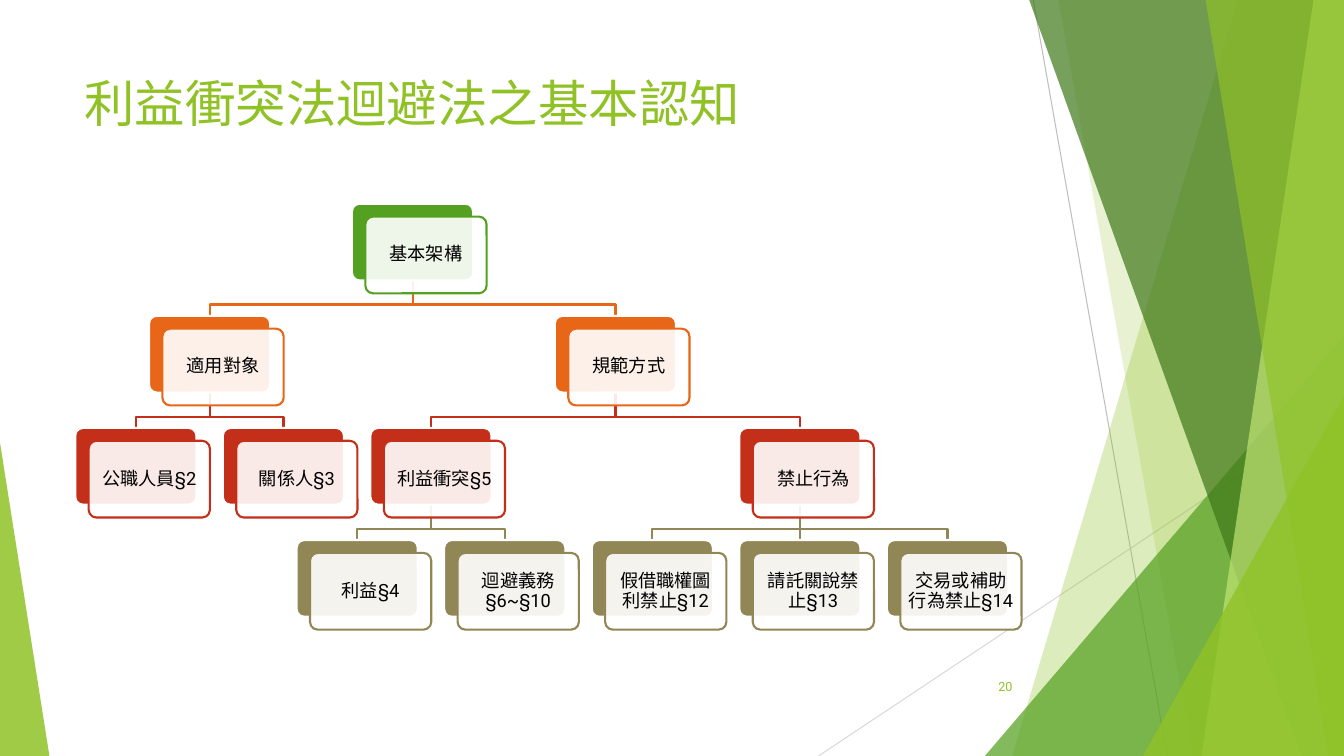
from dataclasses import dataclass

from lxml import etree
from pptx import Presentation
from pptx.dml.color import RGBColor
from pptx.enum.shapes import MSO_CONNECTOR, MSO_SHAPE
from pptx.enum.text import MSO_ANCHOR, PP_ALIGN
from pptx.oxml.ns import qn
from pptx.util import Inches, Pt

LEFT, CENTER, RIGHT = PP_ALIGN.LEFT, PP_ALIGN.CENTER, PP_ALIGN.RIGHT
TOP, MIDDLE = MSO_ANCHOR.TOP, MSO_ANCHOR.MIDDLE
TRIANGLE, ROUNDED = MSO_SHAPE.ISOSCELES_TRIANGLE, MSO_SHAPE.ROUNDED_RECTANGLE
STRAIGHT = MSO_CONNECTOR.STRAIGHT


@dataclass(frozen=True)
class Theme:
    lime: str = "90C226"
    pale_lime: str = "C0E474"
    green: str = "54A021"
    dark_green: str = "3F7819"
    white: str = "FFFFFF"
    black: str = "000000"
    gray: str = "BFBFBF"
    light_gray: str = "D9D9D9"
    levels: tuple = ("54A021", "E76618", "C42F1A", "918655")
    latin_font: str = "Roboto"
    asian_font: str = "Noto Sans CJK SC"
    title_size: float = 36
    card_size: float = 13
    number_size: float = 9
    line_width: float = 1.5
    hairline: float = 0.75


# Chart grid, in percent of the slide's width (x) and height (y)
COLUMN_START, COLUMN_STEP = 5.6, 10.98
ROW_START, ROW_STEP = 26.95, 14.83
CARD_WIDTH, CARD_HEIGHT = 9.02, 10.15
OFFSET_X, OFFSET_Y = 1, 1.7
BEND_RISE = 1.5

# A node is (text, children); a leaf has its grid column instead of children
TREE = ("基本架構", [
    ("適用對象", [("公職人員§2", 0), ("關係人§3", 1)]),
    ("規範方式", [
        ("利益衝突§5", [("利益§4", 1.5), ("迴避義務§6~§10", 2.5)]),
        ("禁止行為", [("假借職權圖利禁止§12", 3.5), ("請託關說禁止§13", 4.5),
                  ("交易或補助行為禁止§14", 5.5)]),
    ]),
])


class SlideBuilder:
    """Draws on one slide; every length is a percentage of the slide's size."""

    def __init__(self, presentation, theme):
        self.theme = theme
        self.width = presentation.slide_width
        self.height = presentation.slide_height
        self.slide = presentation.slides.add_slide(presentation.slide_layouts[6])
        self.shapes = self.slide.shapes

    def point(self, x, y):
        return round(self.width * x / 100), round(self.height * y / 100)

    def paint(self, shape, fill=None, alpha=100, line=None):
        shape.shadow.inherit = False
        if fill:
            shape.fill.solid()
            shape.fill.fore_color.rgb = RGBColor.from_string(fill)
            if alpha < 100:
                color = shape._element.spPr.find(qn("a:solidFill"))[0]
                etree.SubElement(color, qn("a:alpha"), val=str(alpha * 1000))
        else:
            shape.fill.background()
        if line:
            self.stroke(shape, line, self.theme.line_width)
        else:
            shape.line.fill.background()

    def stroke(self, shape, color, width):
        shape.line.color.rgb = RGBColor.from_string(color)
        shape.line.width = Pt(width)

    def line(self, start, end, color, width):
        connector = self.shapes.add_connector(
            STRAIGHT, *self.point(*start), *self.point(*end))
        self.stroke(connector, color, width)
        etree.SubElement(connector._element.spPr, qn("a:effectLst"))

    def outline(self, points, closed=True, **style):
        corners = [self.point(*point) for point in points]
        builder = self.shapes.build_freeform(*corners[0])
        builder.add_line_segments(corners[1:], close=closed)
        self.paint(builder.convert_to_shape(), **style)

    def preset(self, kind, box, adjustment, **style):
        shape = self.shapes.add_shape(
            kind, *self.point(*box[:2]), *self.point(*box[2:]))
        shape.adjustments[0] = adjustment
        self.paint(shape, **style)
        return shape

    def set_text(self, shape, text, size, color, align, anchor, font=None,
                 spacing=1.0, **margins):
        frame = shape.text_frame
        paragraph = frame.paragraphs[0]
        run = paragraph.add_run()
        run.text = text
        formats = (
            (frame, {"word_wrap": True, "vertical_anchor": anchor, **margins}),
            (paragraph, {"alignment": align, "line_spacing": spacing}),
            (run.font, {"size": Pt(size), "name": font or self.theme.latin_font}),
            (run.font.color, {"rgb": RGBColor.from_string(color)}),
        )
        for target, values in formats:
            for name, value in values.items():
                setattr(target, name, value)
        latin = run._r.get_or_add_rPr().find(qn("a:latin"))
        latin.addnext(etree.Element(qn("a:ea"), typeface=self.theme.asian_font))

    def text(self, box, *content, **options):
        shape = self.shapes.add_textbox(*self.point(*box[:2]), *self.point(*box[2:]))
        self.set_text(shape, *content, **options)

    def card(self, left, top, text, color):
        theme = self.theme
        size = (CARD_WIDTH, CARD_HEIGHT)
        self.preset(ROUNDED, (left, top, *size), 0.1, fill=color, line=theme.white)
        front = self.preset(ROUNDED, (left + OFFSET_X, top + OFFSET_Y, *size), 0.1,
                            fill=theme.white, alpha=90, line=color)
        margins = {f"margin_{side}": Inches(0.05)
                   for side in ("left", "right", "top", "bottom")}
        self.set_text(front, text, theme.card_size, theme.black, CENTER, MIDDLE,
                      spacing=0.9, **margins)

    def branch(self, parent_x, child_x, level):
        color = self.theme.levels[level]
        end_y = ROW_START + level * ROW_STEP
        start_y = end_y - ROW_STEP + CARD_HEIGHT
        bend_y = end_y - BEND_RISE
        start, end = (parent_x, start_y), (child_x, end_y)
        if parent_x == child_x:
            self.line(start, end, color, self.theme.line_width)
        else:
            self.outline([start, (parent_x, bend_y), (child_x, bend_y), end],
                         closed=False, line=color)


def column_of(node):
    """A parent is centred over its first and last child."""
    children = node[1]
    if not isinstance(children, list):
        return children
    return (column_of(children[0]) + column_of(children[-1])) / 2


def walk(node, level=0, parent=None):
    yield node, level, parent
    if isinstance(node[1], list):
        for child in node[1]:
            yield from walk(child, level + 1, node)


def left_of(node):
    return COLUMN_START + column_of(node) * COLUMN_STEP


def center_of(node):
    return left_of(node) + CARD_WIDTH / 2


def draw_backdrop(builder):
    theme = builder.theme
    builder.line((76.88, 0), (86.85, 100), theme.gray, theme.hairline)
    builder.line((100, 53.73), (60.9, 100), theme.light_gray, theme.hairline)

    def wedge(top_x, bottom_x, color, alpha):
        builder.outline([(top_x, 0), (100, 0), (100, 100), (bottom_x, 100)],
                        fill=color, alpha=alpha)

    def corner(left, top, width, tip, color, alpha):
        builder.preset(TRIANGLE, (left, top, width, 100 - top), tip,
                       fill=color, alpha=alpha)

    wedge(92.1, 75.3, theme.lime, 30)
    wedge(78.75, 88.73, theme.lime, 20)
    corner(73.28, 44.4, 26.72, 1, theme.green, 72)
    wedge(76.58, 96.83, theme.dark_green, 70)
    wedge(97.73, 89.4, theme.pale_lime, 70)
    wedge(89.7, 98.85, theme.lime, 65)
    corner(85.05, 52.4, 14.95, 1, theme.lime, 80)
    corner(0, 58.53, 3.68, 0, theme.lime, 85)


def main():
    presentation = Presentation()
    presentation.slide_width, presentation.slide_height = Inches(13.33), Inches(7.5)
    theme = Theme()
    builder = SlideBuilder(presentation, theme)
    # Backdrop and title
    draw_backdrop(builder)
    builder.text((5.55, 8.93, 70.5, 19.2), "利益衝突法迴避法之基本認知",
                 theme.title_size, theme.lime, LEFT, TOP, font=theme.asian_font)
    # Hierarchy: branches lie behind the cards
    nodes = list(walk(TREE))
    for node, level, parent in nodes:
        if parent:
            builder.branch(center_of(parent), center_of(node), level)
    for node, level, _ in nodes:
        builder.card(left_of(node), ROW_START + level * ROW_STEP, node[0],
                     theme.levels[level])
    # Slide number
    builder.text((70.44, 88.13, 5.63, 5.33), "20", theme.number_size, theme.lime,
                 RIGHT, MIDDLE)
    presentation.save("out.pptx")


if __name__ == "__main__":
    main()
